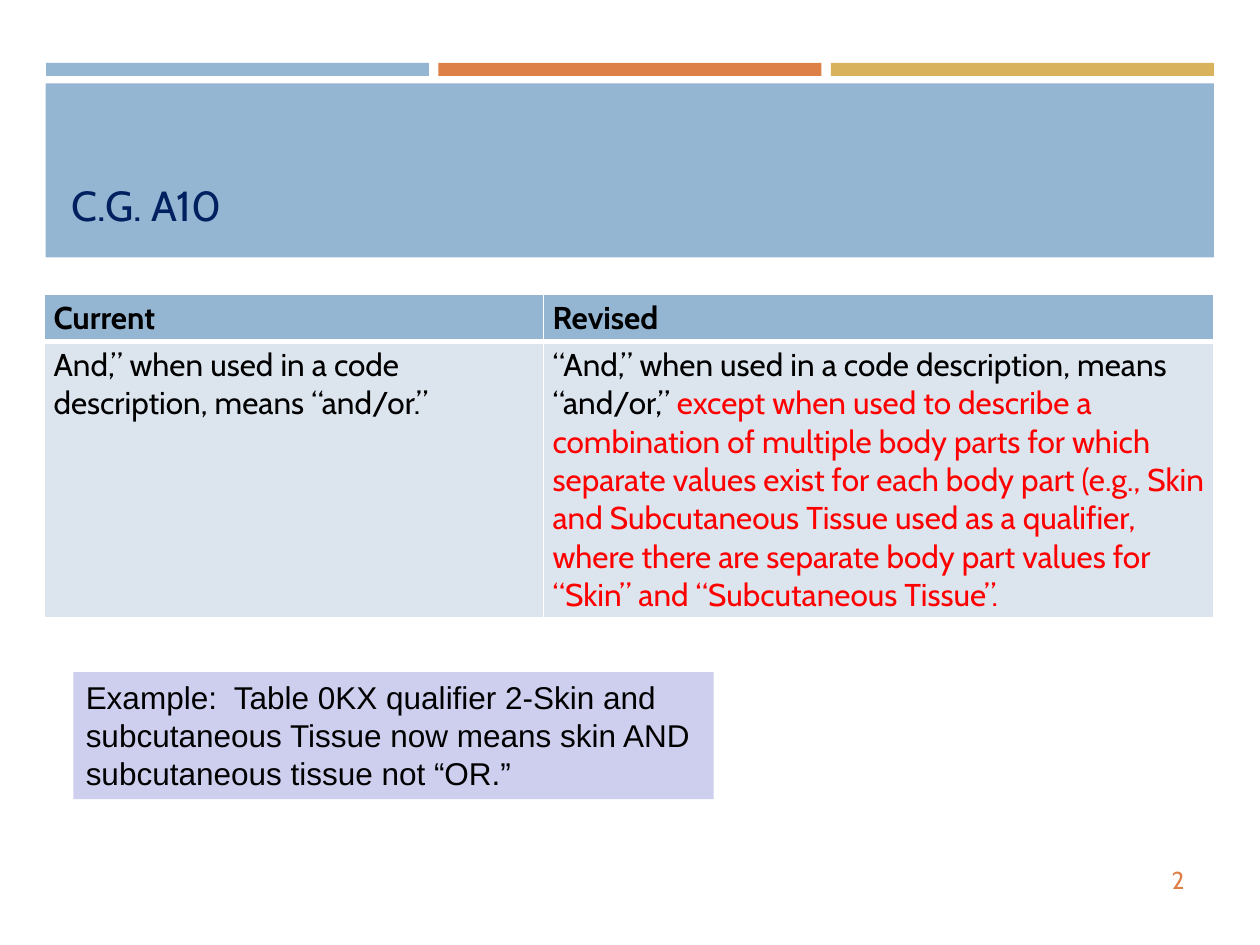
from lxml import etree
from pptx import Presentation
from pptx import util as u
from pptx.dml.color import RGBColor
from pptx.enum import shapes, text
from pptx.oxml.ns import qn

BLUE = RGBColor(0x94, 0xB6, 0xD2)
ORANGE = RGBColor(0xDD, 0x80, 0x47)
GOLD = RGBColor(0xD8, 0xB2, 0x5C)
NAVY = RGBColor(0x00, 0x20, 0x60)
PALE_BLUE = RGBColor(0xDC, 0xE5, 0xEE)
LAVENDER = RGBColor(0xCE, 0xCE, 0xEF)
BLACK = RGBColor(0x00, 0x00, 0x00)
RED = RGBColor(0xFF, 0x00, 0x00)
WHITE = RGBColor(0xFF, 0xFF, 0xFF)

presentation = Presentation()
presentation.slide_width = u.Cm(25.4)
presentation.slide_height = u.Cm(19.05)
slide = presentation.slides.add_slide(presentation.slide_layouts[6])


def add_rectangle(left, top, width, height, color):
    shape = slide.shapes.add_shape(
        shapes.MSO_SHAPE.RECTANGLE, u.Cm(left), u.Cm(top), u.Cm(width), u.Cm(height)
    )
    shape.shadow.inherit = False
    shape.fill.solid()
    shape.fill.fore_color.rgb = color
    shape.line.fill.background()
    return shape


def add_run(paragraph, wording, size, color, font="Cabin", bold=False):
    run = paragraph.add_run()
    run.text = wording
    run.font.name = font
    run.font.size = u.Pt(size)
    run.font.bold = bold
    run.font.color.rgb = color


for index, color in enumerate((BLUE, ORANGE, GOLD)):
    add_rectangle(0.93 + index * 7.91, 1.27, 7.72, 0.26, color)
add_rectangle(0.92, 1.68, 23.55, 3.51, BLUE)

title = slide.shapes.add_textbox(u.Cm(1.19), u.Cm(2.03), u.Cm(22.99), u.Cm(2.74))
title.text_frame.word_wrap = True
title.text_frame.vertical_anchor = text.MSO_ANCHOR.BOTTOM
add_run(title.text_frame.paragraphs[0], "C.G. A10", 24, NAVY)

rows = [
    [[("Current", BLACK)], [("Revised", BLACK)]],
    [
        [("And,” when used in a code description, means “and/or.”", BLACK)],
        [
            ("“And,” when used in a code description, means “and/or,” ", BLACK),
            (
                "except when used to describe a combination of multiple body parts "
                "for which separate values exist for each body part (e.g., Skin and "
                "Subcutaneous Tissue used as a qualifier, where there are separate "
                "body part values for “Skin” and “Subcutaneous Tissue”.",
                RED,
            ),
        ],
    ],
]
table = slide.shapes.add_table(
    2, 2, u.Cm(0.9), u.Cm(5.93), u.Cm(23.57), u.Cm(6.53)
).table
for column, width in zip(table.columns, (10.06, 13.51)):
    column.width = u.Cm(width)
for row, height in zip(table.rows, (0.95, 5.58)):
    row.height = u.Cm(height)

for row_index, row in enumerate(rows):
    header = row_index == 0
    for column_index, pieces in enumerate(row):
        cell = table.cell(row_index, column_index)
        cell.margin_left = cell.margin_right = u.Cm(0.18)
        cell.margin_top = cell.margin_bottom = u.Cm(0.09)
        properties = cell._tc.get_or_add_tcPr()
        for side in ("lnL", "lnR", "lnT", "lnB"):
            thick = side == ("lnB" if header else "lnT")
            border = etree.SubElement(
                properties, qn(f"a:{side}"), w=str(u.Pt(3 if thick else 1))
            )
            border_fill = etree.SubElement(border, qn("a:solidFill"))
            etree.SubElement(border_fill, qn("a:srgbClr"), val=str(WHITE))
        cell.fill.solid()
        cell.fill.fore_color.rgb = BLUE if header else PALE_BLUE
        for wording, color in pieces:
            add_run(cell.text_frame.paragraphs[0], wording, 18, color, bold=header)

number = slide.shapes.add_textbox(u.Cm(23.34), u.Cm(17.35), u.Cm(0.79), u.Cm(0.76))
number.text_frame.word_wrap = True
number.text_frame.vertical_anchor = text.MSO_ANCHOR.MIDDLE
number.text_frame.paragraphs[0].alignment = text.PP_ALIGN.RIGHT
add_run(number.text_frame.paragraphs[0], "2", 14, ORANGE)

example = add_rectangle(1.48, 13.55, 12.91, 2.56, LAVENDER)
example.text_frame.word_wrap = True
example.text_frame.vertical_anchor = text.MSO_ANCHOR.TOP
example.text_frame.paragraphs[0].alignment = text.PP_ALIGN.LEFT
add_run(
    example.text_frame.paragraphs[0],
    "Example:  Table 0KX qualifier 2-Skin and subcutaneous Tissue now means skin "
    "AND subcutaneous tissue not “OR.”",
    18,
    BLACK,
    font="Arial",
)

presentation.save("out.pptx")
